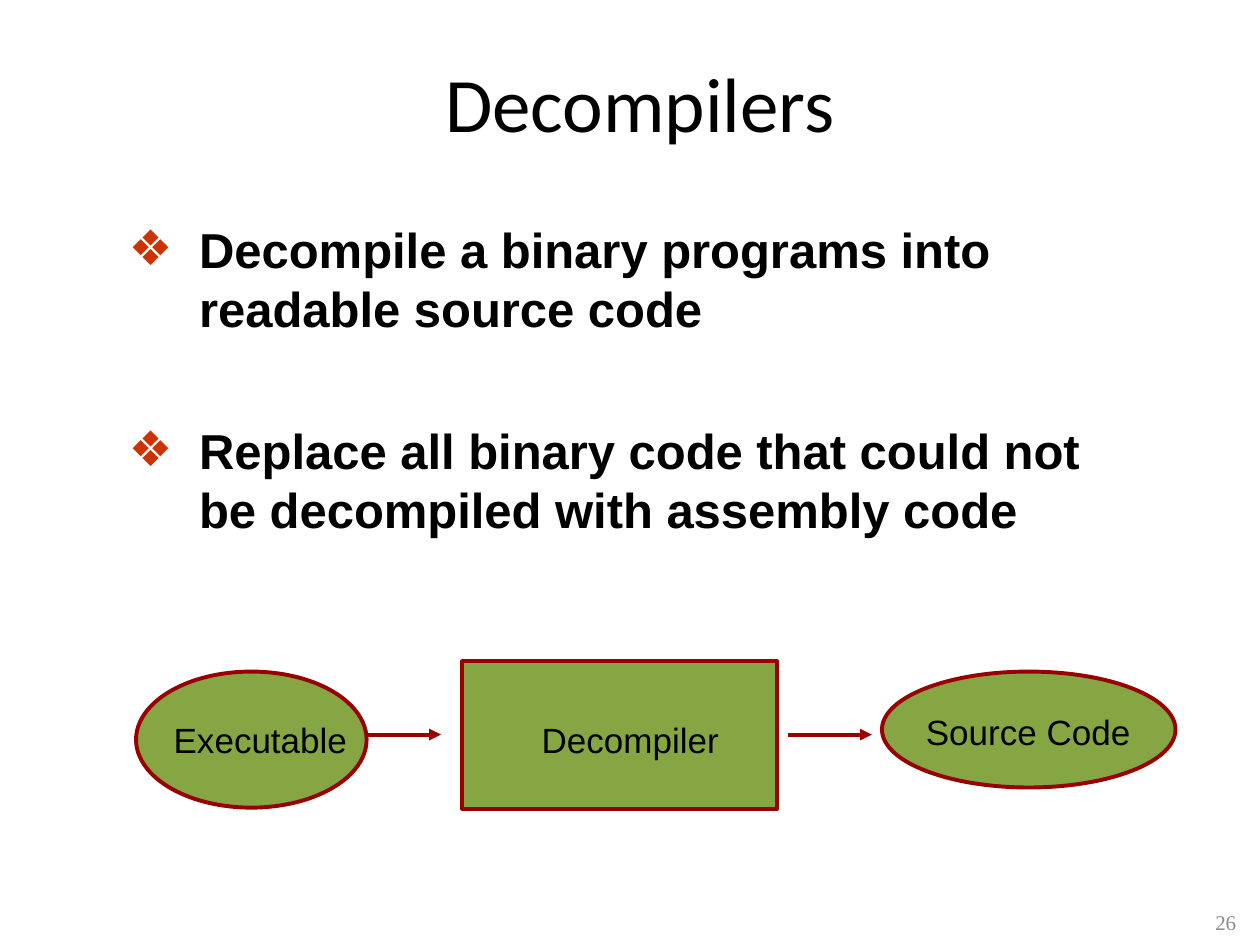
from dataclasses import dataclass

import pptx
import pptx.dml.color
import pptx.enum.shapes
import pptx.enum.text
import pptx.oxml.ns
import pptx.util
from lxml import etree
from pptx.util import Inches

BLACK, GREEN, RED, ORANGE, GREY = "000000", "86A644", "990000", "CC3300", "8C8C8C"
ARROW_Y = 5.83
HANGING = 0.56

ALIGN = pptx.enum.text.PP_ALIGN
ANCHOR = pptx.enum.text.MSO_ANCHOR
SHAPE = pptx.enum.shapes.MSO_SHAPE


@dataclass
class Box:
    left: float
    top: float
    width: float
    height: float

    def lengths(self) -> list:
        return [Inches(n) for n in (self.left, self.top, self.width, self.height)]


@dataclass
class Stage:
    label: str
    outline: int
    area: Box
    label_area: Box


@dataclass
class Arrow:
    start: float
    end: float


STAGES = [
    Stage("Decompiler", SHAPE.RECTANGLE, Box(3.67, 5.25, 2.5, 1.17), Box(4.2, 5.65, 1.84, 0.43)),
    Stage("Executable", SHAPE.OVAL, Box(1.08, 5.33, 1.83, 1.08), Box(1.28, 5.65, 1.8, 0.43)),
    Stage("Source Code", SHAPE.OVAL, Box(7, 5.33, 2.33, 0.92), Box(7.25, 5.59, 2, 0.43)),
]
ARROWS = [Arrow(2.92, 3.5), Arrow(6.25, 6.92)]
POINTS = [
    "Decompile a binary programs into readable source code",
    "Replace all binary code that could not be decompiled with assembly code",
]


def colour(value: str) -> pptx.dml.color.RGBColor:
    return pptx.dml.color.RGBColor.from_string(value)


def add_child(parent, tag: str, **attributes):
    return etree.SubElement(parent, pptx.oxml.ns.qn(tag), **attributes)


def format_runs(paragraph, size: float, face: str, shade: str, bold: bool = False) -> None:
    for run in paragraph.runs:
        run.font.size = pptx.util.Pt(size)
        run.font.name = face
        run.font.bold = bold
        run.font.color.rgb = colour(shade)


def place(placeholder, area: Box) -> None:
    placeholder.left, placeholder.top, placeholder.width, placeholder.height = area.lengths()
    placeholder.text_frame.auto_size = pptx.enum.text.MSO_AUTO_SIZE.NONE


def add_text(slide, area: Box, text: str, size: float, face: str, shade: str,
             align=ALIGN.LEFT, anchor=ANCHOR.TOP) -> None:
    frame = slide.shapes.add_textbox(*area.lengths()).text_frame
    frame.word_wrap = True
    frame.vertical_anchor = anchor
    frame.text = text
    frame.paragraphs[0].alignment = align
    format_runs(frame.paragraphs[0], size, face, shade)


def add_title(slide, text: str) -> None:
    title = slide.shapes.title
    place(title, Box(0.83, 0, 8.5, 1.61))
    title.text_frame.text = text
    title.text_frame.vertical_anchor = ANCHOR.MIDDLE
    title.text_frame.paragraphs[0].alignment = ALIGN.CENTER
    format_runs(title.text_frame.paragraphs[0], 44, "Calibri", BLACK)


def add_points(slide, points: list[str]) -> None:
    body = slide.placeholders[1]
    place(body, Box(0.92, 1.69, 8.08, 3.4))
    frame = body.text_frame
    frame.vertical_anchor = ANCHOR.TOP
    for index, point in enumerate(points):
        paragraph = frame.add_paragraph() if index else frame.paragraphs[0]
        paragraph.text = point
        paragraph.line_spacing = pptx.util.Pt(33.7)
        paragraph.space_before = pptx.util.Pt(47.4 if index else 0)
        properties = paragraph._p.get_or_add_pPr()
        properties.set("marL", str(Inches(HANGING)))
        properties.set("indent", str(-Inches(HANGING)))
        add_child(add_child(properties, "a:buClr"), "a:srgbClr", val=ORANGE)
        add_child(properties, "a:buChar", char="❖")
        format_runs(paragraph, 28, "Arial", BLACK, bold=True)


def add_stage(slide, stage: Stage) -> None:
    figure = slide.shapes.add_shape(stage.outline, *stage.area.lengths())
    figure.shadow.inherit = False
    figure.fill.solid()
    figure.fill.fore_color.rgb = colour(GREEN)
    figure.line.color.rgb = colour(RED)
    figure.line.width = pptx.util.Pt(2.25)
    add_text(slide, stage.label_area, stage.label, 20, "Arial", BLACK)


def add_arrow(slide, arrow: Arrow) -> None:
    connector = slide.shapes.add_connector(
        pptx.enum.shapes.MSO_CONNECTOR.STRAIGHT,
        Inches(arrow.start), Inches(ARROW_Y), Inches(arrow.end), Inches(ARROW_Y))
    connector.line.color.rgb = colour(RED)
    connector.line.width = pptx.util.Pt(2.25)
    add_child(connector.line._get_or_add_ln(), "a:tailEnd", type="triangle")
    add_child(connector._element.spPr, "a:effectLst")


def main() -> None:
    deck = pptx.Presentation()
    deck.slide_width, deck.slide_height = Inches(10), Inches(7.5)
    slide = deck.slides.add_slide(deck.slide_layouts[1])
    add_title(slide, "Decompilers")
    add_points(slide, POINTS)
    for stage in STAGES:
        add_stage(slide, stage)
    for arrow in ARROWS:
        add_arrow(slide, arrow)
    add_text(slide, Box(7.58, 7.12, 2.33, 0.4), "26", 12, "Times New Roman", GREY,
             ALIGN.RIGHT, ANCHOR.MIDDLE)
    deck.save("out.pptx")


if __name__ == "__main__":
    main()
